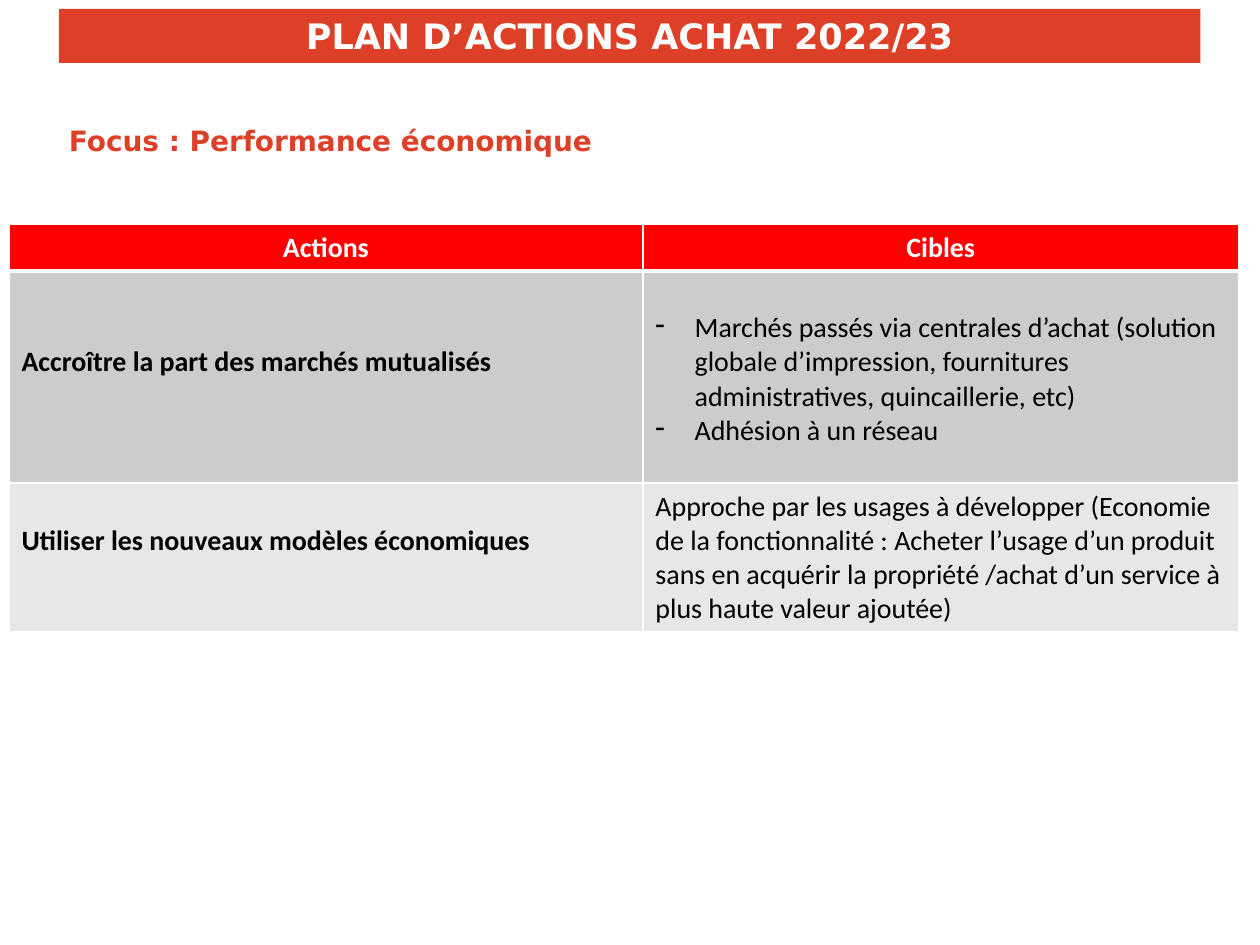
from dataclasses import dataclass

from lxml.etree import SubElement
from pptx import Presentation
from pptx.dml.color import RGBColor
from pptx.enum.shapes import MSO_SHAPE
from pptx.enum.text import MSO_ANCHOR, PP_ALIGN
from pptx.oxml.ns import qn
from pptx.util import Cm, Pt


@dataclass(frozen=True)
class Theme:
    """Hold the colours, fonts and type sizes."""
    brand: str = "DD4026"
    head: str = "FF0000"
    rows: tuple = ("CCCCCC", "E7E7E7")
    white: str = "FFFFFF"
    black: str = "000000"
    title: int = 20
    body: int = 16
    show: str = "DejaVu Sans"
    text: str = "Calibri"


THEME = Theme()
HEADS = ("Actions", "Cibles")
PLAN = (
    ("Accroître la part des marchés mutualisés",
     ("Marchés passés via centrales d’achat (solution globale d’impression, "
      "fournitures administratives, quincaillerie, etc)",
      "Adhésion à un réseau")),
    ("Utiliser les nouveaux modèles économiques",
     ("Approche par les usages à développer (Economie de la fonctionnalité : "
      "Acheter l’usage d’un produit sans en acquérir la propriété /achat d’un "
      "service à plus haute valeur ajoutée)",)),
)
WIDTHS = (12.78, 12.01)
HEIGHTS = (0.94, 4.28, 2.99)
INSETS = ((1.5, 0.81), (0.81, 0.13))


def style(frame, font, size, color, bold=True, align=PP_ALIGN.LEFT):
    """Format every run of a text frame."""
    for para in frame.paragraphs:
        para.alignment = align
        for run in para.runs:
            run.font.name = font
            run.font.size = Pt(size)
            run.font.bold = bold
            run.font.color.rgb = RGBColor.from_string(color)


def add_title(slide, text):
    """Draw the title band."""
    band = slide.shapes.add_shape(
        MSO_SHAPE.RECTANGLE, Cm(1.19), Cm(0.18), Cm(23.01), Cm(1.09))
    band.shadow.inherit = False
    band.fill.solid()
    band.fill.fore_color.rgb = RGBColor.from_string(THEME.brand)
    band.line.fill.background()
    frame = band.text_frame
    frame.text = text
    frame.vertical_anchor = MSO_ANCHOR.MIDDLE
    style(frame, THEME.show, THEME.title, THEME.white, align=PP_ALIGN.CENTER)


def add_focus(slide, text):
    """Write the focus line under the title."""
    box = slide.shapes.add_textbox(Cm(1.14), Cm(1.35), Cm(22.86), Cm(1.95))
    frame = box.text_frame
    frame.word_wrap = True
    frame.vertical_anchor = MSO_ANCHOR.BOTTOM
    frame.text = text
    style(frame, THEME.show, THEME.body, THEME.brand)


def add_edges(cell, top, base):
    """Give a cell white borders of the given top and bottom widths."""
    props = cell._tc.get_or_add_tcPr()
    for side, width in (("L", 1), ("R", 1), ("T", top), ("B", base)):
        line = SubElement(props, qn(f"a:ln{side}"), w=str(Pt(width)))
        fill = SubElement(line, qn("a:solidFill"))
        SubElement(fill, qn("a:srgbClr"), val=THEME.white)


def fill_cell(cell, lines, back, color, top=1, base=1, **look):
    """Set the text, borders and fill of a cell."""
    frame = cell.text_frame
    frame.text = lines[0]
    for line in lines[1:]:
        frame.add_paragraph().text = line
    style(frame, THEME.text, THEME.body, color, **look)
    add_edges(cell, top, base)
    cell.fill.solid()
    cell.fill.fore_color.rgb = RGBColor.from_string(back)


def add_dashes(frame):
    """Turn the paragraphs into a dashed list."""
    for para in frame.paragraphs:
        props = para._p.get_or_add_pPr()
        props.set("marL", str(Cm(0.79)))
        props.set("indent", str(Cm(-0.79)))
        SubElement(props, qn("a:buChar"), char="-")


def add_plan(slide):
    """Build the table of actions and targets."""
    table = slide.shapes.add_table(
        len(HEIGHTS), len(WIDTHS), Cm(0.18), Cm(4.52),
        Cm(sum(WIDTHS)), Cm(sum(HEIGHTS))).table
    for col, width in zip(table.columns, WIDTHS):
        col.width = Cm(width)
    for row, height in zip(table.rows, HEIGHTS):
        row.height = Cm(height)
    for col, head in enumerate(HEADS):
        fill_cell(table.cell(0, col), (head,), THEME.head, THEME.white,
                  base=3, align=PP_ALIGN.CENTER)
    for row, (action, goals) in enumerate(PLAN, 1):
        for col, lines in enumerate(((action,), goals)):
            cell = table.cell(row, col)
            cell.margin_top = Cm(INSETS[row - 1][col])
            fill_cell(cell, lines, THEME.rows[row - 1], THEME.black,
                      top=3 if row == 1 else 1, bold=col == 0)
            if len(lines) > 1:
                add_dashes(cell.text_frame)


def main():
    """Build and save the slide."""
    deck = Presentation()
    deck.slide_width, deck.slide_height = Cm(25.4), Cm(19.05)
    slide = deck.slides.add_slide(deck.slide_layouts[6])
    add_focus(slide, "Focus : Performance économique")
    add_title(slide, "PLAN D’ACTIONS ACHAT 2022/23")
    add_plan(slide)
    deck.save("out.pptx")


if __name__ == "__main__":
    main()
